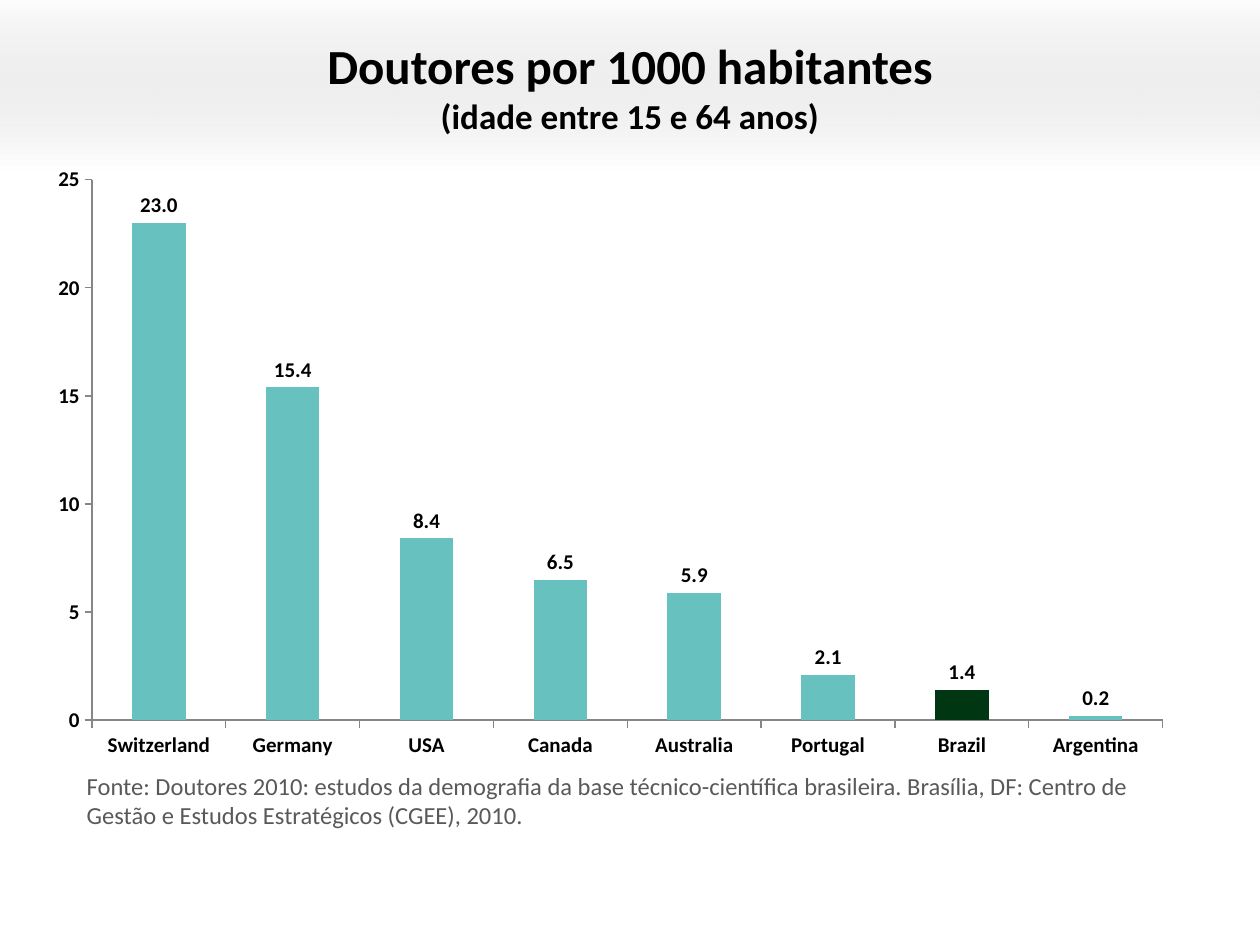
from lxml import etree
from pptx import Presentation
from pptx import util as u
from pptx.chart import data as chart_data
from pptx.dml.color import RGBColor
from pptx.enum import chart as chart_enum
from pptx.enum import shapes, text
from pptx.oxml import ns

BLACK = RGBColor(0x00, 0x00, 0x00)
WHITE = RGBColor(0xFF, 0xFF, 0xFF)
BAND_GREY = RGBColor(0xBF, 0xBF, 0xBF)
AXIS_GREY = RGBColor(0x86, 0x86, 0x86)
SOURCE_GREY = RGBColor(0x59, 0x59, 0x59)
TEAL = RGBColor(0x66, 0xC1, 0xBF)
DARK_GREEN = RGBColor(0x00, 0x36, 0x11)

DOCTORATES = {
    "Switzerland": 23,
    "Germany": 15.4,
    "USA": 8.4,
    "Canada": 6.5,
    "Australia": 5.9,
    "Portugal": 2.1,
    "Brazil": 1.4,
    "Argentina": 0.2,
}
HIGHLIGHT = "Brazil"


class SlideBuilder:
    font_name = "Calibri"

    def __init__(self, slide):
        self.slide = slide

    def place(self, *lengths):
        return [u.Inches(length) for length in lengths]

    def style(self, font, size, color, bold):
        font.name = self.font_name
        font.size = u.Pt(size)
        font.bold = bold
        font.color.rgb = color

    def fading_band(self, *box):
        band = self.slide.shapes.add_shape(
            shapes.MSO_SHAPE.RECTANGLE, *self.place(*box))
        band.shadow.inherit = False
        band.line.fill.background()
        band.fill.gradient()
        band.fill.gradient_angle = 270
        start, end = band.fill.gradient_stops
        start.position, end.position = 0, 1
        start.color.rgb, end.color.rgb = BAND_GREY, WHITE
        grey = band.fill._xPr.find(".//" + ns.qn("a:srgbClr"))
        etree.SubElement(grey, ns.qn("a:alpha"), val="0")

    def text(self, box, lines, sizes, color, bold=False,
             align=text.PP_ALIGN.LEFT, anchor=text.MSO_ANCHOR.TOP,
             auto_size=text.MSO_AUTO_SIZE.NONE):
        frame = self.slide.shapes.add_textbox(*self.place(*box)).text_frame
        frame.word_wrap = True
        frame.auto_size = auto_size
        frame.vertical_anchor = anchor
        frame.text = "\n".join(lines)
        for paragraph, size in zip(frame.paragraphs, sizes):
            paragraph.alignment = align
            for run in paragraph.runs:
                self.style(run.font, size, color, bold)

    def column_chart(self, box, values, highlight):
        countries = chart_data.CategoryChartData()
        countries.categories = list(values)
        countries.add_series("Series 1", list(values.values()))
        chart = self.slide.shapes.add_chart(
            chart_enum.XL_CHART_TYPE.COLUMN_CLUSTERED,
            *self.place(*box), countries).chart
        chart.has_legend = False
        chart.has_title = False
        self.style(chart.font, 12, BLACK, True)

        for axis in (chart.category_axis, chart.value_axis):
            axis.has_major_gridlines = False
            axis.major_tick_mark = chart_enum.XL_TICK_MARK.OUTSIDE
            axis.minor_tick_mark = chart_enum.XL_TICK_MARK.NONE
            axis.format.line.color.rgb = AXIS_GREY
            axis.format.line.width = u.Pt(0.75)
        chart.value_axis.minimum_scale = 0
        chart.value_axis.maximum_scale = 25
        chart.value_axis.major_unit = 5

        plot = chart.plots[0]
        plot.gap_width = 150
        plot.vary_by_categories = False
        bars = plot.series[0]
        bars.format.fill.solid()
        bars.format.fill.fore_color.rgb = TEAL
        highlighted = bars.points[list(values).index(highlight)].format.fill
        highlighted.solid()
        highlighted.fore_color.rgb = DARK_GREEN

        labels = bars.data_labels
        labels.show_value = True
        labels.number_format = "#,##0.0"
        labels.number_format_is_linked = False
        labels.position = chart_enum.XL_LABEL_POSITION.OUTSIDE_END
        self.style(labels.font, 12, BLACK, True)


def main():
    deck = Presentation()
    deck.slide_width, deck.slide_height = u.Inches(10), u.Inches(7.5)
    builder = SlideBuilder(deck.slides.add_slide(deck.slide_layouts[6]))
    builder.fading_band(0, -0.04, 10, 1.39)
    builder.column_chart((0.28, 1.23, 9.13, 4.88), DOCTORATES, HIGHLIGHT)
    builder.text(
        (0.59, 6.07, 9.06, 0.57),
        ["Fonte: Doutores 2010: estudos da demografia da base "
         "técnico-científica brasileira. Brasília, DF: Centro de Gestão e "
         "Estudos Estratégicos (CGEE), 2010."],
        [14], SOURCE_GREY, auto_size=text.MSO_AUTO_SIZE.SHAPE_TO_FIT_TEXT)
    builder.text(
        (0, -0.03, 10, 1.42),
        ["Doutores por 1000 habitantes", "(idade entre 15 e 64 anos)"],
        [28, 20], BLACK, bold=True, align=text.PP_ALIGN.CENTER,
        anchor=text.MSO_ANCHOR.MIDDLE)
    deck.save("out.pptx")


if __name__ == "__main__":
    main()
